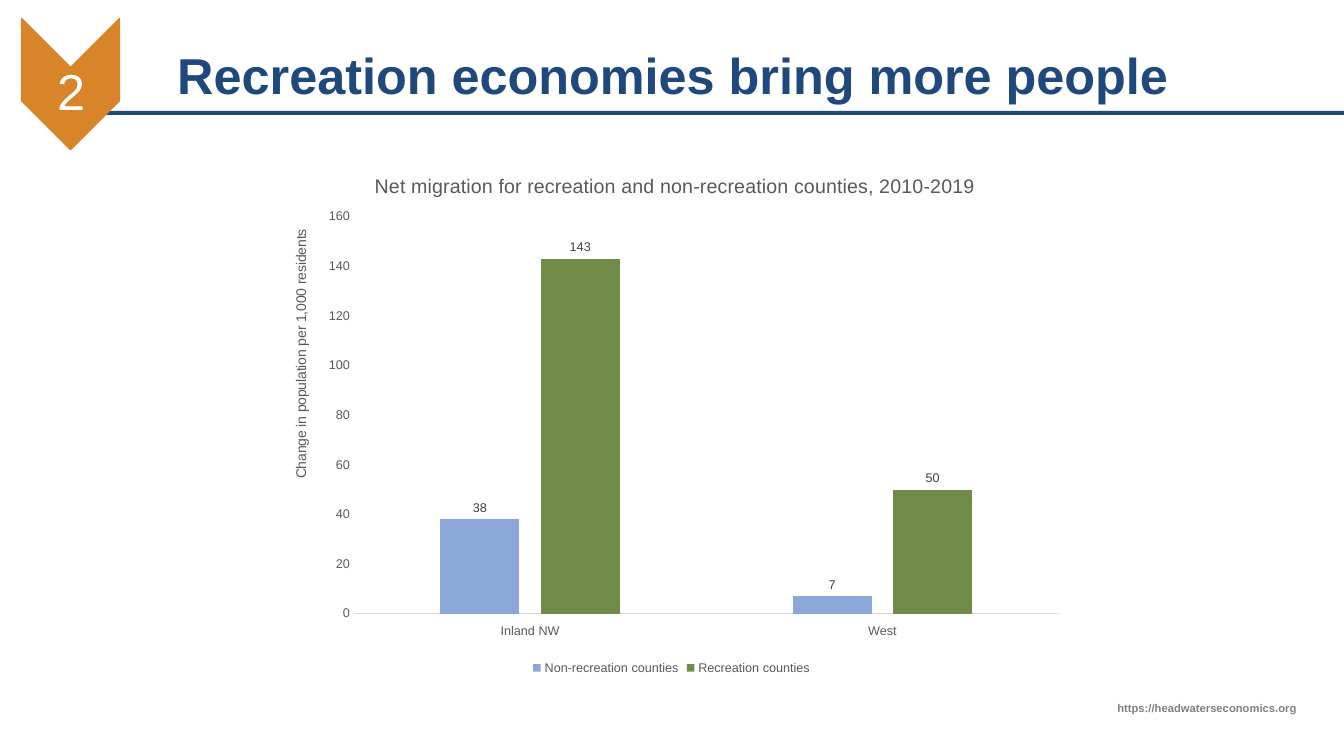
"""Build the slide comparing net migration in recreation and non-recreation counties."""
import lxml.etree
import pptx
import pptx.chart.data
import pptx.dml.color
import pptx.enum.chart
import pptx.enum.shapes
import pptx.enum.text
import pptx.oxml.ns
import pptx.util
from dataclasses import dataclass

HEADLINE = "Recreation economies bring more people"
STEP = "2"
SITE = "https://headwaterseconomics.org"
CHART_TITLE = "Net migration for recreation and non-recreation counties, 2010-2019"
AXIS_TITLE = "Change in population per 1,000 residents"
REGIONS = ["Inland NW", "West"]
MIGRATION = [
    ("Non-recreation counties", (38, 7), "8BA7D7"),
    ("Recreation counties", (143, 50), "718C49"),
]
PX = 9144
CHART_BOX = (267, 148, 798, 526)
PLOT_BOX = (351, 215, 699, 394)
CHART_TITLE_AT = (368, 168)
AXIS_TITLE_AT = (287, 225)

ALIGN = pptx.enum.text.PP_ALIGN
ANCHOR = pptx.enum.text.MSO_ANCHOR
SHAPE = pptx.enum.shapes.MSO_SHAPE
CHART = pptx.enum.chart


@dataclass(frozen=True)
class Theme:
    """Colours and type sizes of the slide."""
    font: str = "Arial"
    navy: str = "1F497D"
    orange: str = "D8852A"
    white: str = "FFFFFF"
    site: str = "808080"
    chart_text: str = "595959"
    value_text: str = "404040"
    baseline: str = "D9D9D9"
    headline_pt: int = 36
    chart_title_pt: int = 14
    axis_title_pt: int = 10
    label_pt: int = 9
    site_pt: int = 8


THEME = Theme()


def rgb(colour):
    """Turn a hex string into a colour."""
    return pptx.dml.color.RGBColor.from_string(colour)


def emu(*lengths):
    """Turn pixel lengths into EMU."""
    return [pptx.util.Emu(length * PX) for length in lengths]


def style(font, size, colour, bold=False):
    """Set the face, size, colour and weight of a font."""
    font.name, font.size, font.bold = THEME.font, pptx.util.Pt(size), bold
    font.color.rgb = rgb(colour)


def write(frame, text, size, colour, bold=False, align=None, spacing=None):
    """Put one formatted paragraph into a text frame."""
    paragraph = frame.paragraphs[0]
    run = paragraph.add_run()
    run.text = text
    style(run.font, size, colour, bold)
    if align is not None:
        paragraph.alignment = align
    if spacing is not None:
        paragraph.line_spacing = spacing


def add_box(slide, box, anchor=ANCHOR.TOP, inset=None):
    """Add a wrapping text box and return its frame."""
    frame = slide.shapes.add_textbox(*emu(*box)).text_frame
    frame.word_wrap, frame.vertical_anchor = True, anchor
    if inset is not None:
        frame.margin_left = frame.margin_right = inset * PX
        frame.margin_top = frame.margin_bottom = inset * PX
    return frame


def add_solid(slide, kind, box, colour):
    """Add a flat coloured shape."""
    solid = slide.shapes.add_shape(kind, *emu(*box))
    solid.shadow.inherit = False
    solid.fill.solid()
    solid.fill.fore_color.rgb = rgb(colour)
    solid.line.fill.background()
    return solid


def place(owner, position, size=None, index=1):
    """Fix a chart part at a pixel position inside the chart."""
    qn = pptx.oxml.ns.qn
    for old in owner.findall(qn("c:layout")):
        owner.remove(old)
    layout = lxml.etree.Element(qn("c:layout"))
    manual = lxml.etree.SubElement(layout, qn("c:manualLayout"))
    left, top, width, height = CHART_BOX
    settings = [("xMode", "edge"), ("yMode", "edge"),
                ("x", round((position[0] - left) / width, 4)),
                ("y", round((position[1] - top) / height, 4))]
    if size:
        settings.insert(0, ("layoutTarget", "inner"))
        settings += [("w", round(size[0] / width, 4)), ("h", round(size[1] / height, 4))]
    for tag, value in settings:
        lxml.etree.SubElement(manual, qn("c:" + tag)).set("val", str(value))
    owner.insert(index, layout)


def add_migration_chart(slide):
    """Add the clustered column chart."""
    data = pptx.chart.data.CategoryChartData(number_format="0")
    data.categories = REGIONS
    for name, values, _ in MIGRATION:
        data.add_series(name, values)
    chart = slide.shapes.add_chart(
        CHART.XL_CHART_TYPE.COLUMN_CLUSTERED, *emu(*CHART_BOX), data).chart
    style(chart.font, THEME.label_pt, THEME.chart_text)

    chart.has_title = True
    write(chart.chart_title.text_frame, CHART_TITLE, THEME.chart_title_pt, THEME.chart_text)
    chart.chart_title.include_in_layout = False
    place(chart.chart_title._element, CHART_TITLE_AT)

    chart.has_legend = True
    chart.legend.position = CHART.XL_LEGEND_POSITION.BOTTOM
    chart.legend.include_in_layout = False
    style(chart.legend.font, THEME.label_pt, THEME.chart_text)

    regions, change = chart.category_axis, chart.value_axis
    for axis in (regions, change):
        axis.major_tick_mark = axis.minor_tick_mark = CHART.XL_TICK_MARK.NONE
        axis.has_major_gridlines = False
        style(axis.tick_labels.font, THEME.label_pt, THEME.chart_text)
    regions.tick_label_position = CHART.XL_TICK_LABEL_POSITION.LOW
    regions.format.line.color.rgb = rgb(THEME.baseline)
    regions.format.line.width = pptx.util.Pt(0.75)
    change.format.line.fill.background()
    change.minimum_scale, change.maximum_scale, change.major_unit = 0, 160, 20
    change.tick_labels.number_format = "0"
    change.tick_labels.number_format_is_linked = False
    write(change.axis_title.text_frame, AXIS_TITLE, THEME.axis_title_pt, THEME.chart_text)
    change.axis_title.text_frame._txBody.bodyPr.set("rot", "-5400000")
    change.axis_title.text_frame._txBody.bodyPr.set("vert", "horz")
    place(change.axis_title._element, AXIS_TITLE_AT)

    columns = chart.plots[0]
    columns.gap_width, columns.overlap, columns.vary_by_categories = 219, -27, False
    for series, (_, _, colour) in zip(columns.series, MIGRATION):
        series.format.fill.solid()
        series.format.fill.fore_color.rgb = rgb(colour)
        labels = series.data_labels
        labels.show_value = True
        labels.number_format, labels.number_format_is_linked = "0", False
        labels.position = CHART.XL_LABEL_POSITION.OUTSIDE_END
        style(labels.font, THEME.label_pt, THEME.value_text)
    plot_area = chart._chartSpace.chart.plotArea
    place(plot_area, PLOT_BOX[:2], PLOT_BOX[2:], index=0)


def main():
    """Assemble and save the slide."""
    deck = pptx.Presentation()
    deck.slide_width, deck.slide_height = emu(1333, 750)
    slide = deck.slides.add_slide(deck.slide_layouts[6])
    add_solid(slide, SHAPE.RECTANGLE, (100, 110, 1233, 4), THEME.navy)
    write(add_box(slide, (872, 691, 424, 24)), SITE, THEME.site_pt, THEME.site,
          bold=True, align=ALIGN.RIGHT)
    write(add_box(slide, (166, 40, 1076, 70), ANCHOR.BOTTOM), HEADLINE,
          THEME.headline_pt, THEME.navy, bold=True, spacing=0.9)
    marker = add_solid(slide, SHAPE.CHEVRON, (5, 35, 130, 97), THEME.orange)
    marker.rotation = 90
    marker.line.color.rgb = rgb(THEME.orange)
    marker.line.width = pptx.util.Pt(1)
    write(add_box(slide, (22, 74, 97, 39), ANCHOR.MIDDLE, inset=3), STEP,
          THEME.headline_pt, THEME.white, align=ALIGN.CENTER, spacing=0.9)
    add_migration_chart(slide)
    deck.save("out.pptx")


if __name__ == "__main__":
    main()
